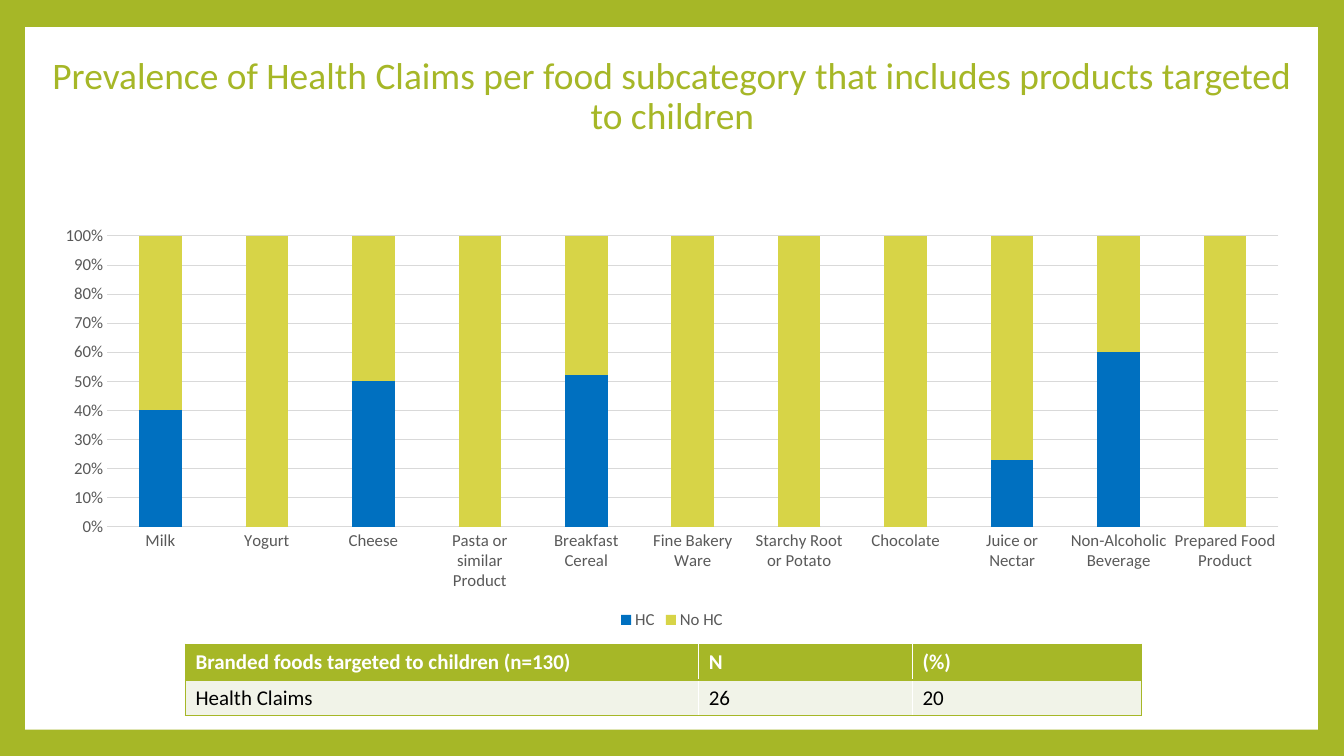
from dataclasses import dataclass

from lxml import etree
from pptx import Presentation
from pptx import util as u
from pptx.chart.data import CategoryChartData
from pptx.dml.color import RGBColor
from pptx.enum import chart as charts, shapes, text
from pptx.oxml import ns


@dataclass(frozen=True)
class Theme:
    font: str = "Calibri"
    green: str = "A6B727"
    white: str = "FFFFFF"
    black: str = "000000"
    row_tint: str = "F1F3E8"
    label_grey: str = "595959"
    grid_grey: str = "D9D9D9"
    claim_blue: str = "0070C0"
    no_claim_lime: str = "D7D447"
    title_size: float = 26.7
    table_size: float = 15
    chart_size: float = 12


CLAIM_SHARES = {
    "Milk": 0.4,
    "Yogurt": 0,
    "Cheese": 0.5,
    "Pasta or similar Product": 0,
    "Breakfast Cereal": 0.52,
    "Fine Bakery Ware": 0,
    "Starchy Root or Potato": 0,
    "Chocolate": 0,
    "Juice or Nectar": 0.23,
    "Non-Alcoholic Beverage": 0.6,
    "Prepared Food Product": 0,
}
SUMMARY = [
    ("Branded foods targeted to children (n=130)", "N", "(%)"),
    ("Health Claims", "26", "20"),
]


def rgb(color):
    return RGBColor.from_string(color)


def box(*lengths):
    return [u.Inches(length) for length in lengths]


class SlideBuilder:
    def __init__(self, slide, theme):
        self.slide = slide
        self.theme = theme

    def paint(self, fill, color):
        fill.solid()
        fill.fore_color.rgb = rgb(color)

    def style_font(self, font, size, color, bold=False):
        font.name = self.theme.font
        font.size = u.Pt(size)
        font.bold = bold
        font.color.rgb = rgb(color)

    def background(self, color):
        self.paint(self.slide.background.fill, color)

    def panel(self, at, color):
        """Add a plain rectangle behind everything else."""
        panel = self.slide.shapes.add_shape(shapes.MSO_SHAPE.RECTANGLE, *box(*at))
        panel.shadow.inherit = False
        self.paint(panel.fill, color)
        panel.line.fill.background()
        self.slide.shapes.element.insert(2, panel.element)

    def title(self, at, wording):
        title = self.slide.shapes.title
        title.left, title.top, title.width, title.height = box(*at)
        frame = title.text_frame
        frame.text = wording
        frame.word_wrap = True
        frame.auto_size = text.MSO_AUTO_SIZE.NONE
        frame.vertical_anchor = text.MSO_ANCHOR.MIDDLE
        frame.margin_left = frame.margin_right = u.Inches(0.1)
        frame.margin_top = frame.margin_bottom = u.Inches(0.1)
        heading = frame.paragraphs[0]
        heading.alignment = text.PP_ALIGN.CENTER
        heading.line_spacing = 0.9
        self.style_font(heading.font, self.theme.title_size, self.theme.green)

    def stacked_columns(self, at, categories, series):
        """Draw percentage columns from (name, values, color) series."""
        theme = self.theme
        data = CategoryChartData(number_format="0%")
        data.categories = categories
        for name, values, _ in series:
            data.add_series(name, values)
        chart = self.slide.shapes.add_chart(
            charts.XL_CHART_TYPE.COLUMN_STACKED, *box(*at), data).chart
        chart.has_title = False
        self.style_font(chart.font, theme.chart_size, theme.label_grey)
        chart.has_legend = True
        chart.legend.position = charts.XL_LEGEND_POSITION.BOTTOM
        chart.legend.include_in_layout = False
        self.style_font(chart.legend.font, theme.chart_size, theme.label_grey)

        plot = chart.plots[0]
        plot.gap_width, plot.overlap = 150, 100
        plot.vary_by_categories = False
        for columns, (_, _, color) in zip(plot.series, series):
            self.paint(columns.format.fill, color)

        shares = chart.value_axis
        for axis in (chart.category_axis, shares):
            axis.major_tick_mark = axis.minor_tick_mark = charts.XL_TICK_MARK.NONE
            self.style_font(axis.tick_labels.font, theme.chart_size, theme.label_grey)
        shares.minimum_scale, shares.maximum_scale = 0, 1
        shares.major_unit = 0.1
        shares.tick_labels.number_format = "0%"
        shares.tick_labels.number_format_is_linked = False
        shares.format.line.fill.background()
        for line in (chart.category_axis.format.line, shares.major_gridlines.format.line):
            line.color.rgb = rgb(theme.grid_grey)
            line.width = u.Pt(0.75)

    def border(self, cell, side, color):
        properties = cell._tc.get_or_add_tcPr()
        line = etree.SubElement(properties, ns.qn(f"a:ln{side}"), w=str(u.Pt(1)))
        solid = etree.SubElement(line, ns.qn("a:solidFill"))
        etree.SubElement(solid, ns.qn("a:srgbClr"), val=color)

    def table(self, at, rows, widths, row_height):
        theme = self.theme
        table = self.slide.shapes.add_table(
            len(rows), len(widths), *box(*at, sum(widths), row_height * len(rows))).table
        table.horz_banding = False
        for column, width in zip(table.columns, widths):
            column.width = u.Inches(width)
        for r, row in enumerate(rows):
            table.rows[r].height = u.Inches(row_height)
            header = r == 0
            for c, wording in enumerate(row):
                cell = table.cell(r, c)
                cell.text = wording
                self.style_font(cell.text_frame.paragraphs[0].font, theme.table_size,
                                theme.white if header else theme.black, header)
                sides = "L" * (c == 0) + "R" * (c == len(row) - 1) + "TB"
                for side in sides:
                    self.border(cell, side, theme.green)
                self.paint(cell.fill, theme.green if header else theme.row_tint)


def main():
    theme = Theme()
    deck = Presentation()
    deck.slide_width, deck.slide_height = box(13.33, 7.5)
    title_only = deck.slide_layouts[5]
    page = SlideBuilder(deck.slides.add_slide(title_only), theme)

    page.background(theme.green)
    page.panel((0.25, 0.27, 12.82, 6.97), theme.white)
    page.title((0.4, 0, 12.54, 1.93),
               "Prevalence of Health Claims per food subcategory "
               "that includes products targeted to children")
    claims = list(CLAIM_SHARES.values())
    no_claims = [round(1 - share, 2) for share in claims]
    page.stacked_columns((0.4, 2.16, 12.53, 4.13), list(CLAIM_SHARES), [
        ("HC", claims, theme.claim_blue),
        ("No HC", no_claims, theme.no_claim_lime),
    ])
    page.table((1.84, 6.39), SUMMARY, widths=(5.09, 2.12, 2.27), row_height=0.35)
    deck.save("out.pptx")


if __name__ == "__main__":
    main()
